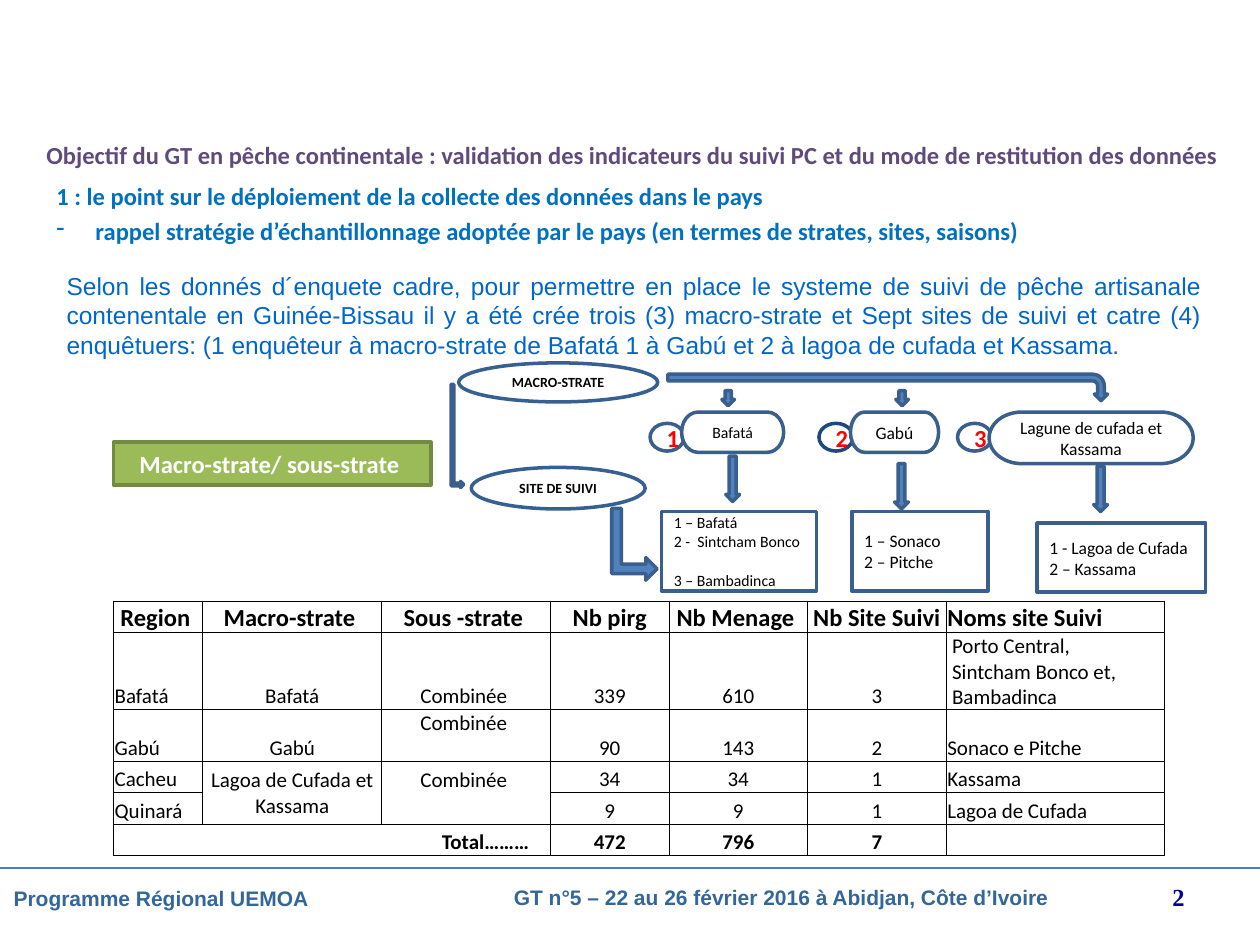
"""Builds the slide on the inland fishery sampling strata."""
import lxml.etree
import pptx
import pptx.dml.color
import pptx.enum.shapes
import pptx.enum.text
import pptx.oxml.ns
import pptx.util

Inches = pptx.util.Inches
Pt = pptx.util.Pt
qn = pptx.oxml.ns.qn
SHAPE = pptx.enum.shapes.MSO_SHAPE
ALIGN = pptx.enum.text.PP_ALIGN
ANCHOR = pptx.enum.text.MSO_ANCHOR


def color(value):
    return pptx.dml.color.RGBColor.from_string(value)


class SlideBuilder:
    def __init__(self, slide, font="Calibri", outline="3A5F8C", arrow_fill="4F81BD"):
        self.slide = slide
        self.font = font
        self.outline = outline
        self.arrow_fill = arrow_fill

    def style(self, paragraph, size, ink, bold=False, align=ALIGN.LEFT, font=None):
        paragraph.alignment = align
        paragraph.font.size = Pt(size)
        paragraph.font.name = font or self.font
        paragraph.font.bold = bold
        paragraph.font.color.rgb = color(ink)

    def fill_text(self, frame, text, anchor, **style):
        frame.word_wrap = True
        frame.vertical_anchor = anchor
        frame.text = text
        for paragraph in frame.paragraphs:
            self.style(paragraph, **style)

    def text(self, box, text, anchor=ANCHOR.TOP, **style):
        frame = self.slide.shapes.add_textbox(*map(Inches, box)).text_frame
        self.fill_text(frame, text, anchor, **style)
        return frame

    def dash(self, paragraph, indent):
        properties = paragraph._p.get_or_add_pPr()
        properties.set("marL", str(Inches(indent)))
        properties.set("indent", str(-Inches(indent)))
        lxml.etree.SubElement(properties, qn("a:buChar"), char="-")

    def shape(self, kind, box, fill="FFFFFF", outline=None):
        shape = self.slide.shapes.add_shape(kind, *map(Inches, box))
        shape.shadow.inherit = False
        shape.fill.solid()
        shape.fill.fore_color.rgb = color(fill)
        shape.line.color.rgb = color(outline or self.outline)
        shape.line.width = Pt(2)
        return shape

    def label(self, kind, box, text, size, ink="000000", bold=False,
              align=ALIGN.CENTER, **look):
        shape = self.shape(kind, box, **look)
        self.fill_text(shape.text_frame, text, ANCHOR.MIDDLE, size=size, ink=ink,
                       bold=bold, align=align)
        return shape

    def arrow(self, kind, box, rotation=0, adjustments=()):
        shape = self.shape(kind, box, self.arrow_fill)
        shape.rotation = rotation
        for index, value in enumerate(adjustments):
            shape.adjustments[index] = value

    def rule(self, left, right, top, ink):
        line = self.slide.shapes.add_connector(
            pptx.enum.shapes.MSO_CONNECTOR.STRAIGHT,
            Inches(left), Inches(top), Inches(right), Inches(top))
        line.line.color.rgb = color(ink)
        line.line.width = Pt(0.75)
        lxml.etree.SubElement(line._element.spPr, qn("a:effectLst"))

    def cell(self, cell, text, **style):
        cell.fill.background()
        cell.margin_left = cell.margin_right = cell.margin_top = Inches(0.01)
        cell.margin_bottom = 0
        cell.vertical_anchor = ANCHOR.BOTTOM
        cell.text_frame.text = text
        for paragraph in cell.text_frame.paragraphs:
            self.style(paragraph, ink="000000", **style)
            if not text:
                lxml.etree.SubElement(paragraph._p, qn("a:endParaRPr"), sz="1200")
        properties = cell._tc.get_or_add_tcPr()
        for index, side in enumerate(("a:lnL", "a:lnR", "a:lnT", "a:lnB")):
            border = lxml.etree.Element(qn(side), w=str(Pt(0.5)))
            solid = lxml.etree.SubElement(border, qn("a:solidFill"))
            lxml.etree.SubElement(solid, qn("a:srgbClr"), val="000000")
            properties.insert(index, border)

    def table(self, box, widths, heights, rows):
        table = self.slide.shapes.add_table(
            len(rows), len(widths), *map(Inches, box)).table
        table.first_row = table.horz_banding = False
        for column, width in zip(table.columns, widths):
            column.width = Inches(width)
        for row, height in zip(table.rows, heights):
            row.height = Inches(height)
        last_row, last_column = len(rows) - 1, len(widths) - 1
        for i, row in enumerate(rows):
            for j, text in enumerate(row):
                left = j == last_column or (j == 0 and i > 0)
                self.cell(table.cell(i, j), text, size=12 if i else 14,
                          bold=i in (0, last_row),
                          align=ALIGN.LEFT if left else ALIGN.CENTER)
        return table


def add_headings(builder):
    builder.text((0.27, 0.99, 9.57, 0.47),
                 "Objectif du GT en pêche continentale : validation des indicateurs du suivi PC "
                 "et du mode de restitution des données",
                 ANCHOR.MIDDLE, size=14, ink="604A7B", bold=True)
    frame = builder.text((0.35, 1.39, 8.74, 0.63),
                         "1 : le point sur le déploiement de la collecte des données dans le pays",
                         size=14, ink="0070C0", bold=True)
    paragraph = frame.add_paragraph()
    paragraph.text = ("rappel stratégie d’échantillonnage adoptée par le pays "
                      "(en termes de strates, sites, saisons)")
    builder.dash(paragraph, 0.31)
    builder.style(paragraph, 14, "0070C0", True)
    paragraph.space_before = Pt(2.8)
    builder.text((0.43, 2.1, 9.21, 0.81),
                 "Selon les donnés d´enquete cadre, pour permettre en place le systeme de suivi de "
                 "pêche artisanale contenentale en Guinée-Bissau il y a été crée trois (3) "
                 "macro-strate et Sept sites de suivi et catre (4) enquêtuers: (1 enquêteur à "
                 "macro-strate de Bafatá 1 à Gabú et 2 à lagoa de cufada et Kassama.",
                 size=14, ink="0066CC", align=ALIGN.JUSTIFY, font="Arial")


def add_footer(builder):
    builder.rule(0, 10, 6.89, "4B7EBC")
    footer = dict(size=12, ink="336699", bold=True, font="Arial")
    builder.text((0.01, 6.98, 4.1, 0.4), "Programme Régional UEMOA", **footer)
    builder.text((3.98, 6.97, 5.2, 0.4),
                 "GT n°5 – 22 au 26 février 2016 à Abidjan, Côte d’Ivoire", **footer)
    builder.text((8.78, 6.95, 0.72, 0.4), "2", size=14, ink="000099", bold=True,
                 align=ALIGN.RIGHT, font="Times New Roman")


def add_table(builder):
    rows = [
        ("Region ", "Macro-strate ", "Sous -strate ", "Nb pirg", "Nb Menage ",
         "Nb Site Suivi", "Noms site Suivi"),
        ("Bafatá", "Bafatá", "Combinée ", "339", "610", "3",
         " Porto Central,\n Sintcham Bonco et,\n Bambadinca"),
        ("Gabú", "Gabú", "Combinée ", "90", "143", "2", "Sonaco e Pitche"),
        ("Cacheu", "Lagoa de Cufada et Kassama", "Combinée ", "34", "34", "1", "Kassama"),
        ("Quinará", "", "", "9", "9", "1", "Lagoa de Cufada"),
        ("Total………", "", "", "472", "796", "7", ""),
    ]
    table = builder.table((0.9, 4.77, 8.35, 2), (0.71, 1.42, 1.34, 0.94, 1.1, 1.1, 1.73),
                          (0.25, 0.61, 0.41, 0.25, 0.25, 0.25), rows)
    for column in (1, 2):
        table.cell(3, column).merge(table.cell(4, column))
    table.cell(3, 1).vertical_anchor = ANCHOR.MIDDLE
    for row, margin in ((2, 0.01), (3, 0.05)):
        table.cell(row, 2).vertical_anchor = ANCHOR.TOP
        table.cell(row, 2).margin_top = Inches(margin)
    total = table.cell(5, 0)
    total.merge(table.cell(5, 2))
    total.margin_right = Inches(0.17)
    total.text_frame.paragraphs[0].alignment = ALIGN.RIGHT


def add_diagram(builder):
    for box, text in (((3.64, 2.88, 1.58, 0.31), "MACRO-STRATE"),
                      ((3.74, 3.71, 1.38, 0.33), "SITE DE SUIVI")):
        builder.label(SHAPE.OVAL, box, text, 8, bold=True, outline="376092")
    strata = (((5.41, 3.27, 0.81, 0.32), "Bafatá", 9),
              ((6.75, 3.27, 0.7, 0.32), "Gabú", 10),
              ((7.85, 3.27, 1.62, 0.41), "Lagune de cufada et Kassama", 10))
    for number, (box, text, size) in enumerate(strata, 1):
        builder.label(SHAPE.OVAL, (box[0] - 0.25, 3.36, 0.27, 0.22), str(number), 14,
                      "FF0000", True, outline="1F497D" if number == 2 else None)
        builder.label(SHAPE.FLOWCHART_TERMINATOR, box, text, size)
    sites = (((5.25, 4.06, 1.23, 0.63), "1 – Bafatá\n2 -  Sintcham Bonco\n3 – Bambadinca", 9),
             ((6.76, 4.06, 1.08, 0.63), "1 – Sonaco\n2 – Pitche", 10),
             ((8.23, 4.15, 1.34, 0.55), "1 - Lagoa de Cufada\n2 – Kassama", 10))
    boxes = [builder.label(SHAPE.RECTANGLE, box, text, size, align=ALIGN.LEFT)
             for box, text, size in sites]
    boxes[0].text_frame.paragraphs[2].space_before = Pt(11)
    for left, top in ((5.76, 3.62), (7.1, 3.68), (8.68, 3.7)):
        builder.arrow(SHAPE.DOWN_ARROW, (left, top, 0.11, 0.36))
    for left in (5.73, 7.11):
        builder.arrow(SHAPE.DOWN_ARROW, (left, 3.1, 0.1, 0.12))
    for box in ((3.22, 3.41, 0.82, 0.1), (4.75, 4.14, 0.57, 0.36)):
        builder.arrow(SHAPE.BENT_UP_ARROW, box, 90, (0.21, 0.25, 0.25))
    builder.arrow(SHAPE.BENT_ARROW, (6.94, 1.33, 0.21, 3.49), 90)
    builder.label(SHAPE.RECTANGLE, (0.9, 3.51, 2.52, 0.34), "Macro-strate/ sous-strate ", 14,
                  "FFFFFF", True, fill="9BBB59", outline="738A42")


def main():
    presentation = pptx.Presentation()
    presentation.slide_width, presentation.slide_height = Inches(10), Inches(7.5)
    builder = SlideBuilder(presentation.slides.add_slide(presentation.slide_layouts[6]))
    add_headings(builder)
    add_footer(builder)
    add_table(builder)
    add_diagram(builder)
    presentation.save("out.pptx")


if __name__ == "__main__":
    main()
